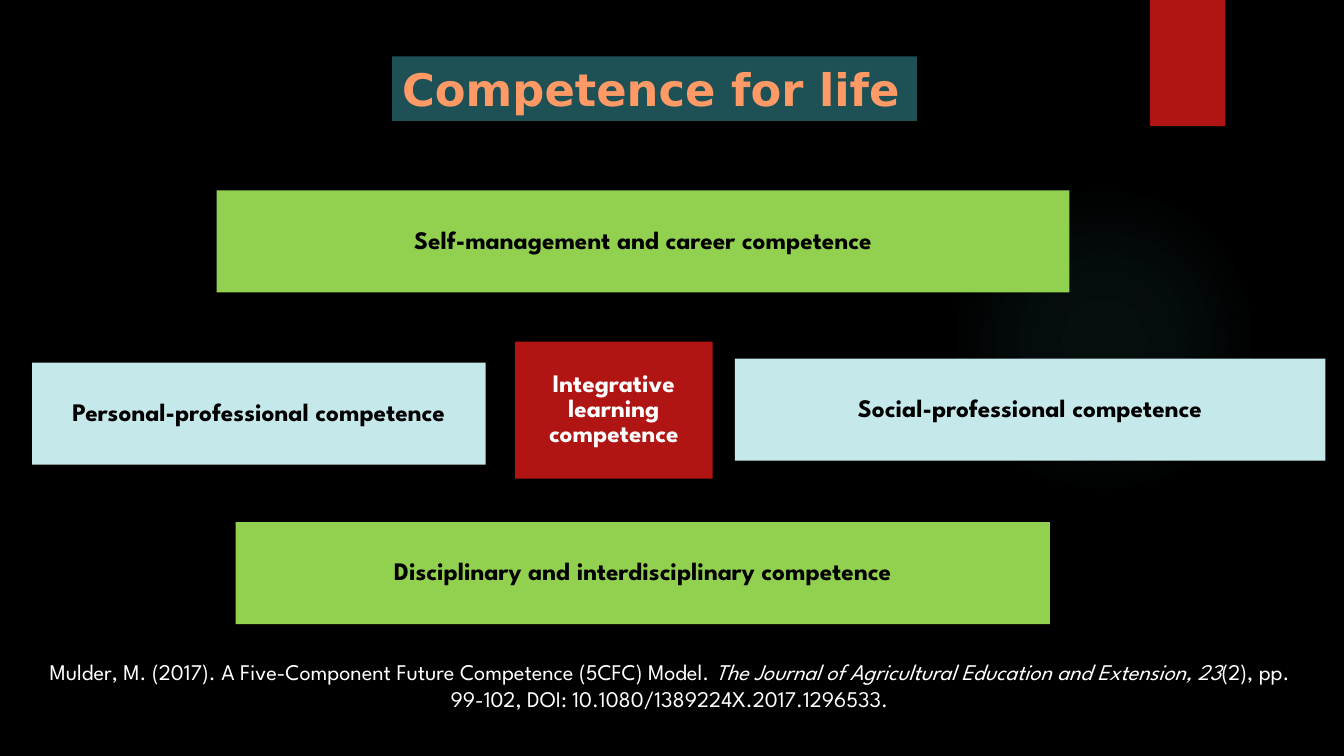
from dataclasses import dataclass

from lxml import etree
from pptx import Presentation
from pptx.dml.color import RGBColor
from pptx.enum import shapes, text
from pptx.oxml import ns
from pptx.util import Cm, Pt


@dataclass(frozen=True)
class Theme:
    background: str = "000000"
    red: str = "B01513"
    green: str = "92D050"
    pale: str = "C5E8EA"
    teal: str = "1E5155"
    orange: str = "FF9966"
    glow: str = "50B9C1"
    dark: str = "000000"
    light: str = "FFFFFF"
    title_font: str = "DejaVu Sans"
    body_font: str = "League Spartan"
    title_size: int = 32
    label_size: int = 18
    source_size: int = 16


THEME = Theme()
TITLE = "Competence for life"
TITLE_AREA = (9.88, 1.42, 13.23, 1.63)
BAND_HEIGHT = 2.57
COMPETENCES = [
    ("Personal-professional competence", (0.81, 9.14, 11.43, BAND_HEIGHT), THEME.pale, THEME.dark),
    ("Integrative\nlearning\ncompetence", (12.98, 8.61, 4.98, 3.45), THEME.red, THEME.light),
    ("Social-professional competence", (18.52, 9.04, 14.88, BAND_HEIGHT), THEME.pale, THEME.dark),
    ("Self-management and career competence", (5.46, 4.8, 21.49, BAND_HEIGHT), THEME.green, THEME.dark),
    ("Disciplinary and interdisciplinary competence", (5.94, 13.16, 20.52, BAND_HEIGHT), THEME.green, THEME.dark),
]
SOURCE_AREA = (0.81, 16.46, 32.13, 1.63)
SOURCE = [
    ("Mulder, M. (2017). A Five-Component Future Competence (5CFC) Model. ", False),
    ("The Journal of Agricultural Education and Extension, 23", True),
    ("(2), pp. 99-102, DOI: 10.1080/1389224X.2017.1296533.", False),
]
GLOW_AREA = (23.9, 4.65, 7.82, 7.82)
GLOW_STOPS = [(0, 7), (36, 6), (69, 0), (100, 0)]
RIBBON_AREA = (28.98, 0, 1.9, 3.18)


def lengths(area):
    return [Cm(value) for value in area]


def paint(shape, color):
    shape.fill.solid()
    shape.fill.fore_color.rgb = RGBColor.from_string(color)


def style(span, font, size, color, bold=False, italic=False):
    span.font.name = font
    span.font.size = Pt(size)
    span.font.color.rgb = RGBColor.from_string(color)
    span.font.bold = bold
    span.font.italic = italic


def add_block(page, kind, area, color):
    block = page.shapes.add_shape(kind, *lengths(area))
    block.shadow.inherit = False
    block.line.fill.background()
    paint(block, color)
    return block


def add_glow(page):
    glow = add_block(page, shapes.MSO_SHAPE.OVAL, GLOW_AREA, THEME.glow)
    solid = glow.element.spPr.find(ns.qn("a:solidFill"))
    gradient = etree.Element(ns.qn("a:gradFill"), rotWithShape="1")
    stops = etree.SubElement(gradient, ns.qn("a:gsLst"))
    for position, opacity in GLOW_STOPS:
        stop = etree.SubElement(stops, ns.qn("a:gs"), pos=str(position * 1000))
        color = etree.SubElement(stop, ns.qn("a:srgbClr"), val=THEME.glow)
        etree.SubElement(color, ns.qn("a:alpha"), val=str(opacity * 1000))
    circle = etree.SubElement(gradient, ns.qn("a:path"), path="circle")
    etree.SubElement(circle, ns.qn("a:fillToRect"), l="50000", t="50000", r="50000", b="50000")
    glow.element.spPr.replace(solid, gradient)


def add_title(page):
    title = page.shapes.title
    title.left, title.top, title.width, title.height = lengths(TITLE_AREA)
    paint(title, THEME.teal)
    frame = title.text_frame
    frame.text = TITLE
    frame.word_wrap = False
    frame.auto_size = text.MSO_AUTO_SIZE.NONE
    frame.vertical_anchor = text.MSO_ANCHOR.MIDDLE
    para = frame.paragraphs[0]
    para.alignment = text.PP_ALIGN.LEFT
    style(para.runs[0], THEME.title_font, THEME.title_size, THEME.orange, bold=True)


def add_competence(page, label, area, fill, ink):
    box = add_block(page, shapes.MSO_SHAPE.RECTANGLE, area, fill)
    frame = box.text_frame
    frame.text = label
    frame.word_wrap = True
    frame.vertical_anchor = text.MSO_ANCHOR.MIDDLE
    for para in frame.paragraphs:
        para.alignment = text.PP_ALIGN.CENTER
        para.line_spacing = Pt(THEME.label_size)
        style(para.runs[0], THEME.body_font, THEME.label_size, ink, bold=True)


def add_source(page):
    frame = page.shapes.add_textbox(*lengths(SOURCE_AREA)).text_frame
    frame.word_wrap = True
    para = frame.paragraphs[0]
    para.alignment = text.PP_ALIGN.CENTER
    for words, italic in SOURCE:
        span = para.add_run()
        span.text = words
        style(span, THEME.body_font, THEME.source_size, THEME.light, italic=italic)


def main():
    deck = Presentation()
    deck.slide_width, deck.slide_height = Cm(33.87), Cm(19.05)
    page = deck.slides.add_slide(deck.slide_layouts.get_by_name("Title Only"))
    paint(page.background, THEME.background)
    add_glow(page)
    add_block(page, shapes.MSO_SHAPE.RECTANGLE, RIBBON_AREA, THEME.red)
    for competence in COMPETENCES:
        add_competence(page, *competence)
    add_title(page)
    add_source(page)
    deck.save("out.pptx")


if __name__ == "__main__":
    main()
